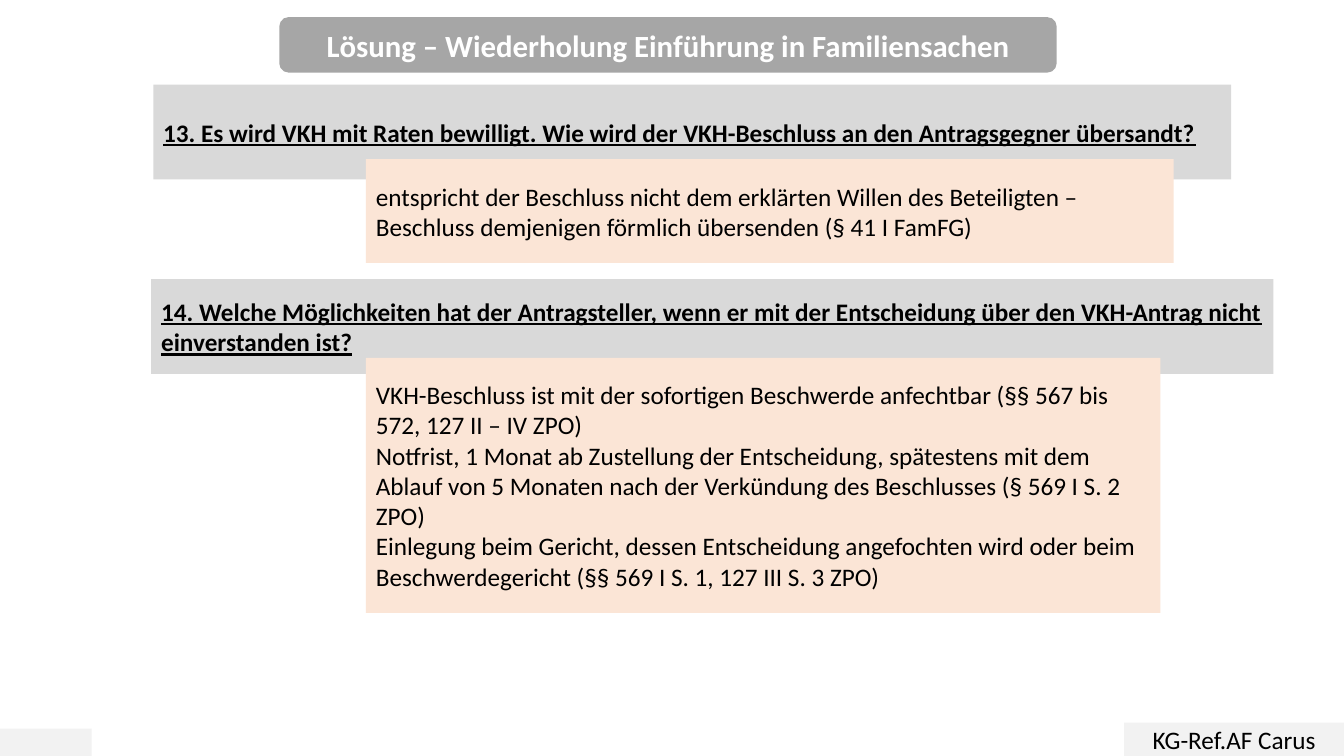
from pptx import Presentation, util as u
from pptx.dml.color import RGBColor
from pptx.enum import shapes, text

COLORS = {"title": "A6A6A6", "question": "D9D9D9", "answer": "FBE5D6",
          "footer": "F2F2F2", "ink": "000000", "white": "FFFFFF"}
FONT = "Calibri"
WIDTH, HEIGHT = u.Inches(13.33), u.Inches(7.5)
COLS, ROWS = 133.3, 75
QUESTION_ROWS = 9.4


def add_panel(s, box, fill, lines=(), size=18, color="ink", bold=False,
              underline=False, align=text.PP_ALIGN.LEFT,
              kind=shapes.MSO_SHAPE.RECTANGLE):
    """Filled panel; box is left, top, width, height in grid columns and rows."""
    x, y, w, h = box
    sp = s.shapes.add_shape(kind, round(x * WIDTH / COLS), round(y * HEIGHT / ROWS),
                            round(w * WIDTH / COLS), round(h * HEIGHT / ROWS))
    sp.shadow.inherit = False
    sp.fill.solid()
    sp.fill.fore_color.rgb = RGBColor.from_string(COLORS[fill])
    sp.line.fill.background()
    tf = sp.text_frame
    tf.word_wrap = True
    tf.vertical_anchor = text.MSO_ANCHOR.MIDDLE
    tf.text = "\n".join(lines)
    for p in tf.paragraphs:
        p.alignment = align
        for r in p.runs:
            r.font.name, r.font.size = FONT, u.Pt(size)
            r.font.bold, r.font.underline = bold, underline
            r.font.color.rgb = RGBColor.from_string(COLORS[color])


def add_title(s, box, title):
    add_panel(s, box, "title", [title], size=22, color="white", bold=True,
              align=text.PP_ALIGN.CENTER, kind=shapes.MSO_SHAPE.ROUNDED_RECTANGLE)


def add_question_block(s, box, question, answers, indent, drop, answer_cols):
    """Question across the top of box; answer indented, dropped, down to its foot."""
    x, y, w, h = box
    add_panel(s, (x, y, w, QUESTION_ROWS), "question", [question],
              bold=True, underline=True)
    add_panel(s, (x + indent, y + drop, answer_cols, h - drop), "answer", answers)


def add_footer(s, box, label):
    """Blank tab at the left and labelled tab at the right of box."""
    x, y, w, h = box
    label_cols, tab_cols, tab_rows = 21.8, 9.1, 2.7
    add_panel(s, (x, y + h - tab_rows, tab_cols, tab_rows), "footer")
    add_panel(s, (x + w - label_cols, y, label_cols, h), "footer", [label],
              align=text.PP_ALIGN.CENTER)


def main():
    prs = Presentation()
    prs.slide_width, prs.slide_height = WIDTH, HEIGHT
    s = prs.slides.add_slide(prs.slide_layouts[6])
    add_title(s, (27.7, 1.7, 77.1, 5.5),
              "Lösung – Wiederholung Einführung in Familiensachen")
    add_question_block(
        s, (15.2, 8.4, 106.9, 17.7),
        "13. Es wird VKH mit Raten bewilligt. Wie wird der VKH-Beschluss an den "
        "Antragsgegner übersandt?",
        ["entspricht der Beschluss nicht dem erklärten Willen des Beteiligten – "
         "Beschluss demjenigen förmlich übersenden (§ 41 I FamFG)"],
        indent=21.1, drop=7.4, answer_cols=80.1)
    add_question_block(
        s, (15, 27.7, 111.3, 33.1),
        "14. Welche Möglichkeiten hat der Antragsteller, wenn er mit der Entscheidung "
        "über den VKH-Antrag nicht einverstanden ist?",
        ["VKH-Beschluss ist mit der sofortigen Beschwerde anfechtbar (§§ 567 bis 572, "
         "127 II – IV ZPO)",
         "Notfrist, 1 Monat ab Zustellung der Entscheidung, spätestens mit dem Ablauf "
         "von 5 Monaten nach der Verkündung des Beschlusses (§ 569 I S. 2 ZPO)",
         "Einlegung beim Gericht, dessen Entscheidung angefochten wird oder beim "
         "Beschwerdegericht (§§ 569 I S. 1, 127 III S. 3 ZPO)"],
        indent=21.3, drop=7.8, answer_cols=78.8)
    add_footer(s, (0, 71.7, COLS, 3.3), "KG-Ref.AF Carus")
    prs.save("out.pptx")


if __name__ == "__main__":
    main()
